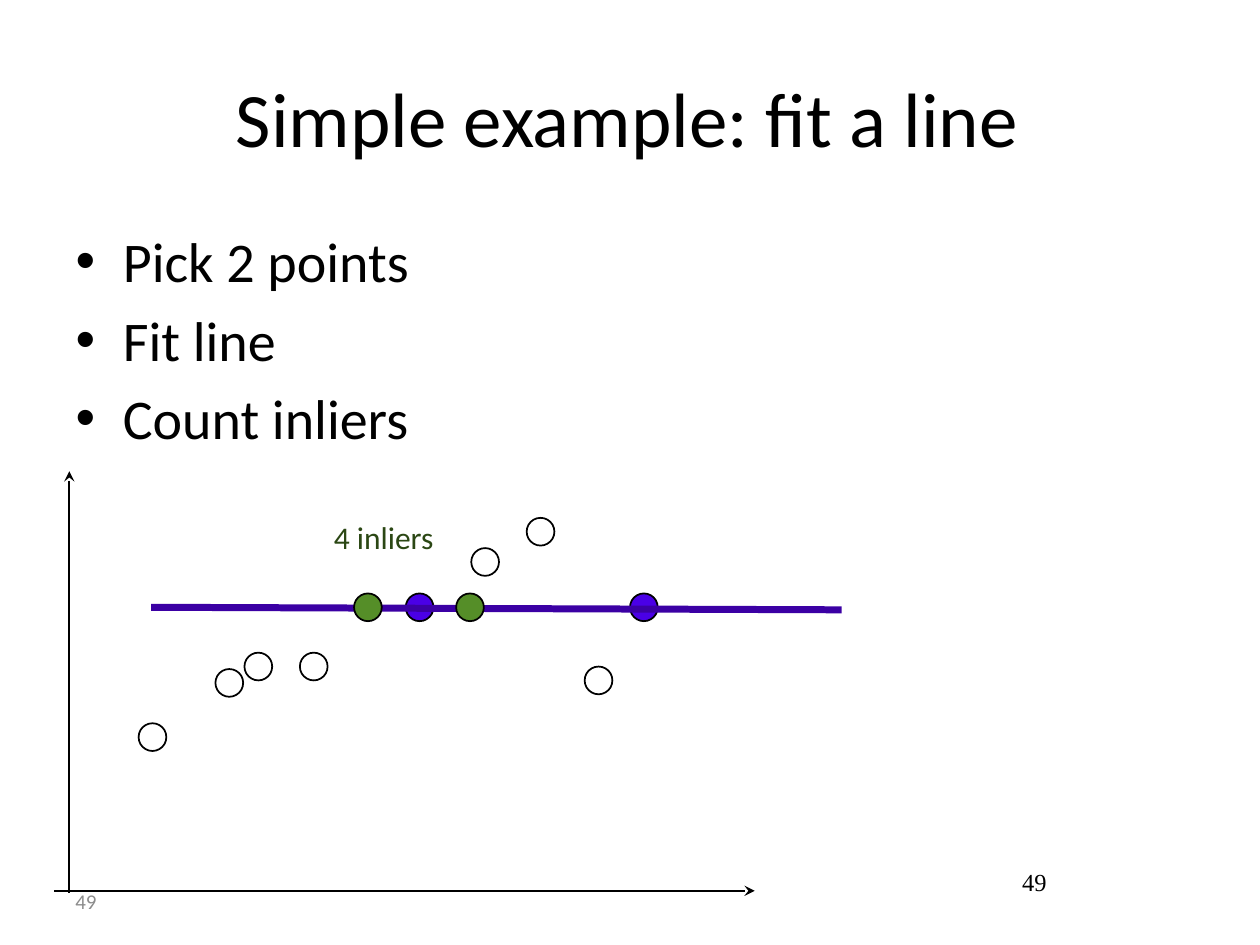
from typing import NamedTuple

from lxml import etree
from pptx import Presentation
from pptx.dml.color import RGBColor
from pptx.enum import shapes, text
from pptx.oxml import ns
from pptx.util import Emu, Pt

BLACK = RGBColor(0x00, 0x00, 0x00)
WHITE = RGBColor(0xFF, 0xFF, 0xFF)
GRAY = RGBColor(0x8C, 0x8C, 0x8C)
BLUE = RGBColor(0x4A, 0x00, 0xE6)
INDIGO = RGBColor(0x3B, 0x00, 0xA4)
GREEN = RGBColor(0x55, 0x8E, 0x28)
MOSS = RGBColor(0x2B, 0x47, 0x14)

# Square grid: 100 columns by 75 rows
CELL = 91440
COLS, ROWS = 100, 75
DOT = 2.2
FIT = 48.2


class Box(NamedTuple):
    col: float
    row: float
    wide: float
    high: float


class Font(NamedTuple):
    size: float
    color: RGBColor = BLACK
    name: str = "Calibri"


class Line(NamedTuple):
    start: tuple[float, float]
    end: tuple[float, float]
    color: RGBColor = BLACK
    width: float = 1
    arrow: bool = True


class Dots(NamedTuple):
    fill: RGBColor
    spots: list[tuple[float, float]]  # centres


def grid(*cells: float) -> list[Emu]:
    return [Emu(round(c * CELL)) for c in cells]


def place(shape, box: Box) -> None:
    shape.left, shape.top, shape.width, shape.height = grid(*box)


def inset(frame, *sides: float) -> None:
    (frame.margin_left, frame.margin_top,
     frame.margin_right, frame.margin_bottom) = grid(*sides)


def write(para, words: str, font: Font) -> None:
    run = para.add_run()
    run.text = words
    run.font.name, run.font.size = font.name, Pt(font.size)
    run.font.color.rgb = font.color


def label(slide, box: Box, words: str, font: Font, wrap: bool = False):
    frame = slide.shapes.add_textbox(*grid(*box)).text_frame
    frame.word_wrap = wrap
    write(frame.paragraphs[0], words, font)
    return frame


def draw_line(slide, line: Line) -> None:
    link = slide.shapes.add_connector(
        shapes.MSO_CONNECTOR.STRAIGHT, *grid(*line.start, *line.end))
    link.line.color.rgb = line.color
    link.line.width = Pt(line.width)
    if line.arrow:
        etree.SubElement(link.line._get_or_add_ln(), ns.qn("a:headEnd"), type="stealth")
    etree.SubElement(link._element.spPr, ns.qn("a:effectLst"))


def draw_dots(slide, dots: Dots) -> None:
    for x, y in dots.spots:
        dot = slide.shapes.add_shape(
            shapes.MSO_SHAPE.OVAL, *grid(x - DOT / 2, y - DOT / 2, DOT, DOT))
        dot.shadow.inherit = False
        dot.fill.solid()
        dot.fill.fore_color.rgb = dots.fill
        dot.line.color.rgb = BLACK
        dot.line.width = Pt(1)


def add_bullet(para, words: str) -> None:
    props = para._p.get_or_add_pPr()
    props.set("marL", "342900")
    props.set("indent", "-342900")
    space = etree.SubElement(props, ns.qn("a:spcBef"))
    etree.SubElement(space, ns.qn("a:spcPct"), val="20000")
    etree.SubElement(props, ns.qn("a:buFont"), typeface="Arial")
    etree.SubElement(props, ns.qn("a:buChar"), char="•")
    write(para, words, Font(32))


AXES = [Line((5.5, 37.4), (5.5, 70.9)), Line((59.9, 70.7), (4.3, 70.7))]
MODEL = Line((12, 48.2), (66.8, 48.4), INDIGO, 4, False)
OTHERS = Dots(WHITE, [(12.1, 58.5), (18.2, 54.2), (24.9, 52.9), (42.9, 42.2),
                      (38.5, 44.6), (20.5, 52.9), (47.5, 54)])
PICKED = Dots(BLUE, [(51.1, FIT), (33.3, FIT)])
INLIERS = Dots(GREEN, [(29.2, FIT), (37.3, FIT)])


def main() -> None:
    deck = Presentation()
    deck.slide_width, deck.slide_height = grid(COLS, ROWS)
    slide = deck.slides.add_slide(deck.slide_layouts[1])
    title, body = slide.placeholders

    # Title
    place(title, Box(5, 3, 90, 12.5))
    frame = title.text_frame
    inset(frame, 1, 0.5, 1.4, 0.5)
    frame.vertical_anchor = text.MSO_ANCHOR.MIDDLE
    frame.paragraphs[0].alignment = text.PP_ALIGN.CENTER
    write(frame.paragraphs[0], "Simple example: fit a line", Font(44))

    # Steps
    place(body, Box(5, 17.5, 90, 49.5))
    frame = body.text_frame
    inset(frame, 1, 0.5, 1.4, 0.5)
    for i, step in enumerate(["Pick 2 points", "Fit line", "Count inliers"]):
        add_bullet(frame.add_paragraph() if i else frame.paragraphs[0], step)

    # Page numbers
    foot = label(slide, Box(5, 69.5, 23.3, 4), "49", Font(12, GRAY), wrap=True)
    foot.vertical_anchor = text.MSO_ANCHOR.MIDDLE
    page = label(slide, Box(80.5, 68.3, 3.2, 3.2), "49",
                 Font(14, name="Times New Roman"))
    inset(page, 0, 0.5, 0, 0.5)
    page.paragraphs[0].alignment = text.PP_ALIGN.CENTER

    # Plot: the fitted line lies over the picked points, under the inliers
    for axis in AXES:
        draw_line(slide, axis)
    draw_dots(slide, OTHERS)
    draw_dots(slide, PICKED)
    draw_line(slide, MODEL)
    draw_dots(slide, INLIERS)

    # Inlier count
    count = label(slide, Box(26.1, 41.1, 12.4, 4), "4 inliers", Font(18, MOSS))
    inset(count, 0, 0, 0.4, 0)
    count.auto_size = text.MSO_AUTO_SIZE.SHAPE_TO_FIT_TEXT
    count.paragraphs[0]._p.get_or_add_pPr().set("marL", "36576")

    deck.save("out.pptx")


if __name__ == "__main__":
    main()
